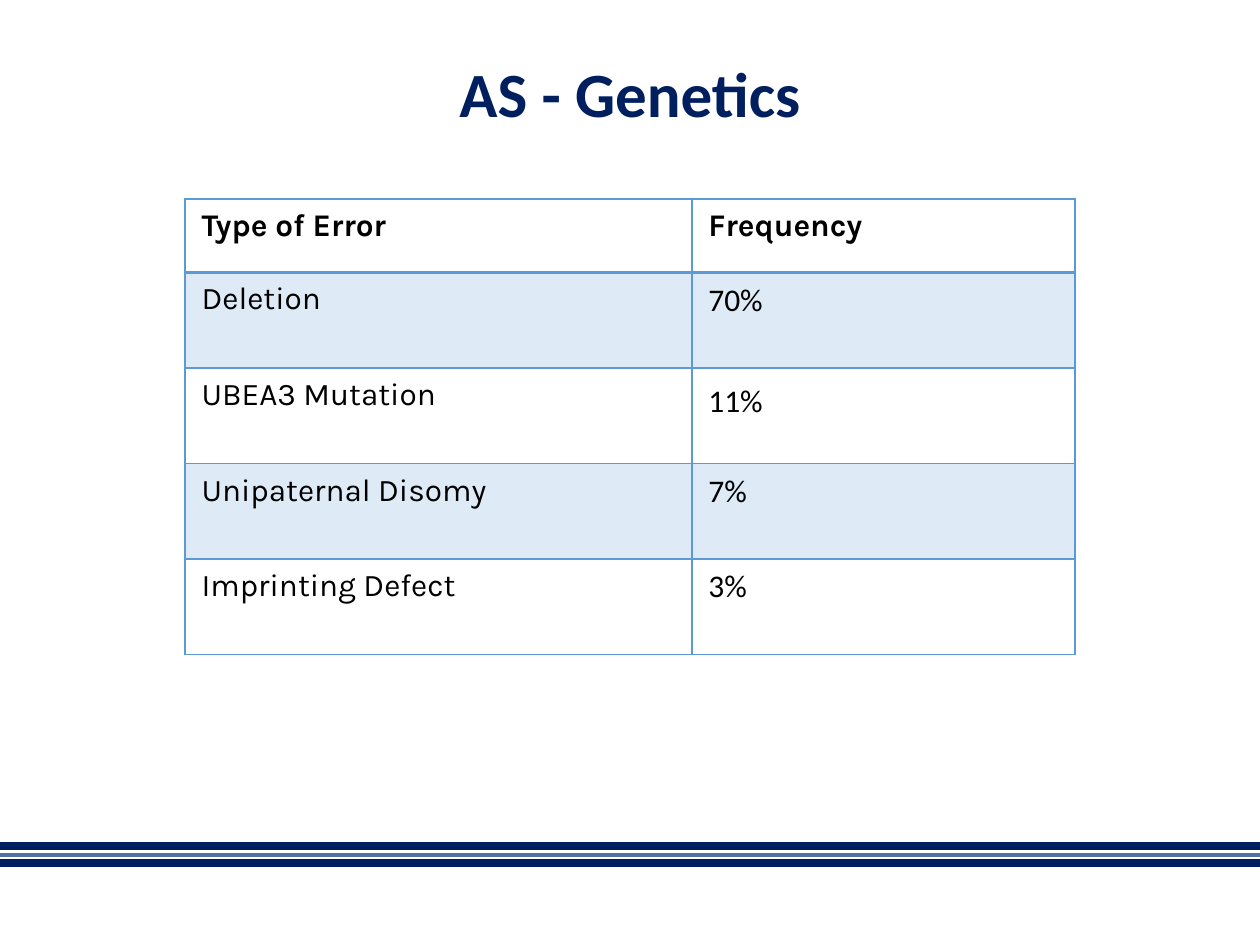
from lxml import etree
from pptx import Presentation
from pptx.dml.color import RGBColor
from pptx.enum.shapes import MSO_CONNECTOR
from pptx.enum.text import MSO_ANCHOR, MSO_AUTO_SIZE, PP_ALIGN
from pptx.oxml.ns import qn
from pptx.util import Pt

STRAIGHT = MSO_CONNECTOR.STRAIGHT
TOP = MSO_ANCHOR.TOP
CENTER = PP_ALIGN.CENTER
NO_AUTOFIT = MSO_AUTO_SIZE.NONE

NAVY = RGBColor(0x00, 0x1F, 0x5F)
STEEL = RGBColor(0x50, 0x70, 0xA7)
BLUE = RGBColor(0x5B, 0x9B, 0xD5)
BLACK = RGBColor(0x00, 0x00, 0x00)

SLIDE_W, SLIDE_H = 720, 540
LABEL_FONT, VALUE_FONT = "Karla", "Calibri"

ROWS = [
    ("Type of Error", "Frequency"),
    ("Deletion", "70%"),
    ("UBEA3 Mutation", "11%"),
    ("Unipaternal Disomy", "7%"),
    ("Imprinting Defect", "3%"),
]
LOOSE_VALUE = "11%"


def assign(target, **values):
    for name, value in values.items():
        setattr(target, name, value)


class Deck:
    def __init__(self):
        self.prs = Presentation()
        assign(self.prs, slide_width=Pt(SLIDE_W), slide_height=Pt(SLIDE_H))
        self.s = self.prs.slides.add_slide(self.prs.slide_layouts[5])

    def style(self, font, color, **values):
        assign(font, **values)
        font.color.rgb = color

    def title(self, text, left, top, width, height):
        sp = self.s.shapes.title
        assign(sp, left=Pt(left), top=Pt(top), width=Pt(width), height=Pt(height))
        tf = sp.text_frame
        inset = Pt(7.2)
        assign(tf, word_wrap=True, auto_size=NO_AUTOFIT, vertical_anchor=TOP,
               margin_left=inset, margin_right=inset,
               margin_top=inset, margin_bottom=inset)
        p = tf.paragraphs[0]
        assign(p, alignment=CENTER, line_spacing=0.9)
        r = p.add_run()
        r.text = text
        self.style(r.font, NAVY, name="Calibri", size=Pt(36), bold=True)

    def rule(self, y, color, weight):
        """Draw a line across the full slide width."""
        line = self.s.shapes.add_connector(STRAIGHT, 0, Pt(y), Pt(SLIDE_W), Pt(y))
        line.line.color.rgb = color
        line.line.width = Pt(weight)
        etree.SubElement(line._element.spPr, qn("a:effectLst"))

    def border(self, cell, side, weight):
        ln = etree.SubElement(cell._tc.get_or_add_tcPr(), qn(f"a:ln{side}"),
                              w=str(Pt(weight)))
        fill = etree.SubElement(ln, qn("a:solidFill"))
        etree.SubElement(fill, qn("a:srgbClr"), val=str(BLUE))

    def tint(self, cell):
        """Fill the cell with blue at 20% opacity."""
        cell.fill.solid()
        cell.fill.fore_color.rgb = BLUE
        clr = cell._tc.tcPr.find(qn("a:solidFill")).find(qn("a:srgbClr"))
        etree.SubElement(clr, qn("a:alpha"), val="20000")

    def cell(self, cell, text, row, font):
        assign(cell, margin_left=Pt(9.4), margin_right=Pt(9.4),
               margin_top=Pt(5), margin_bottom=Pt(5), vertical_anchor=TOP)
        for side in "LRTB":
            header_edge = (row, side) in ((0, "B"), (1, "T"))
            self.border(cell, side, 2 if header_edge else 1)
        if row % 2:
            self.tint(cell)
        else:
            cell.fill.background()
        p = cell.text_frame.paragraphs[0]
        if text == LOOSE_VALUE:
            p.line_spacing = 1.15
        r = p.add_run()
        r.text = text
        self.style(r.font, BLACK, name=font, size=Pt(18), bold=row == 0)

    def table(self, rows, left, top, col_widths, row_heights):
        frame = self.s.shapes.add_table(
            len(rows), len(col_widths), Pt(left), Pt(top),
            Pt(sum(col_widths)), Pt(sum(row_heights)))
        table = frame.table
        assign(table, first_row=False, horz_banding=False)
        for col, width in zip(table.columns, col_widths):
            col.width = Pt(width)
        for i, (row, height) in enumerate(zip(rows, row_heights)):
            table.rows[i].height = Pt(height)
            for j, text in enumerate(row):
                font = VALUE_FONT if i and j else LABEL_FONT
                self.cell(table.cell(i, j), text, i, font)


def main():
    deck = Deck()
    for y, color, weight in ((483.5, NAVY, 4.5), (488.5, STEEL, 2.25), (493, NAVY, 4.5)):
        deck.rule(y, color, weight)
    deck.title("AS - Genetics", 49.5, 28.75, 621, 104.4)
    deck.table(ROWS, 105.8, 113.8, (289.6, 218.9), [41.8] + [54.6] * 4)
    deck.prs.save("out.pptx")


if __name__ == "__main__":
    main()
